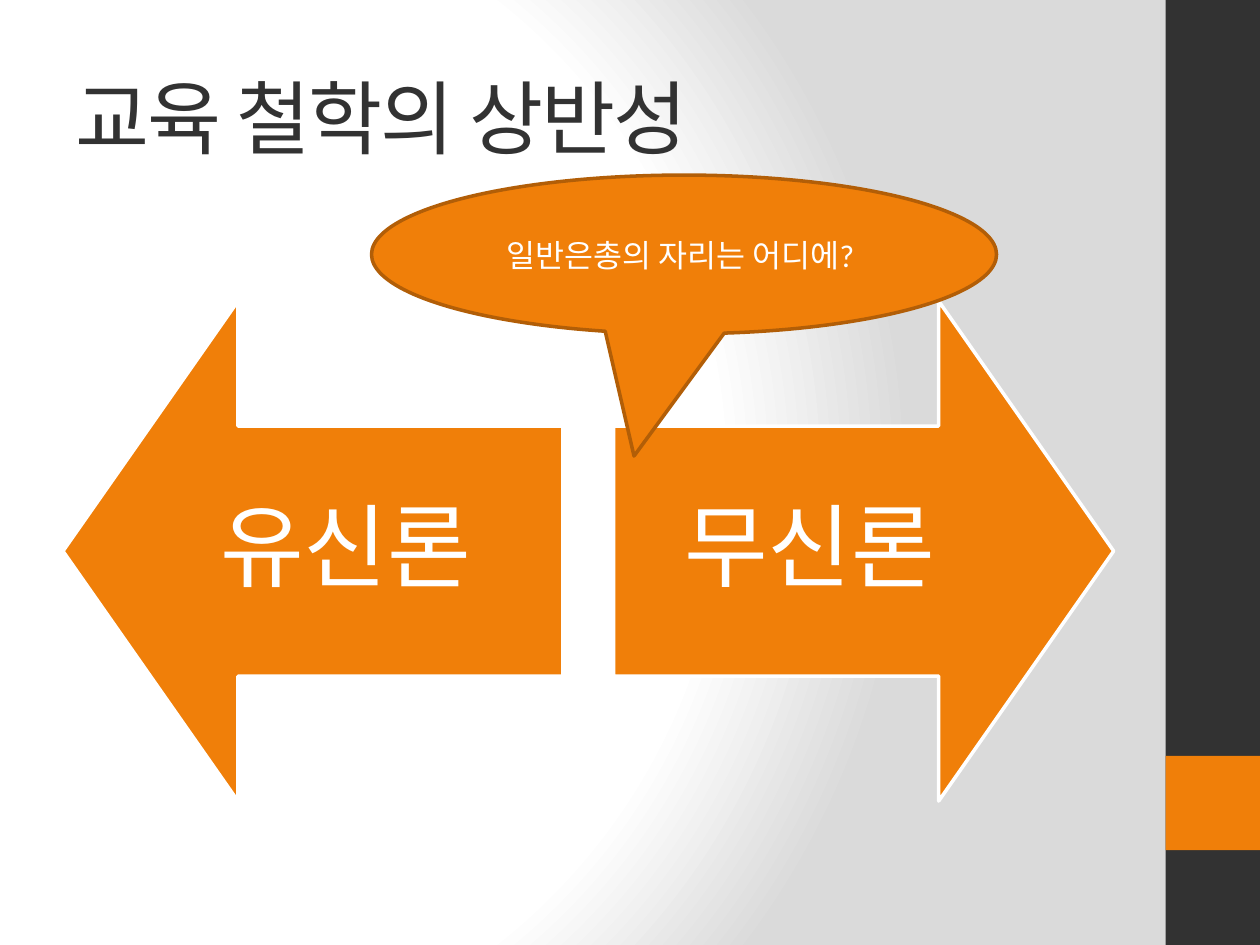
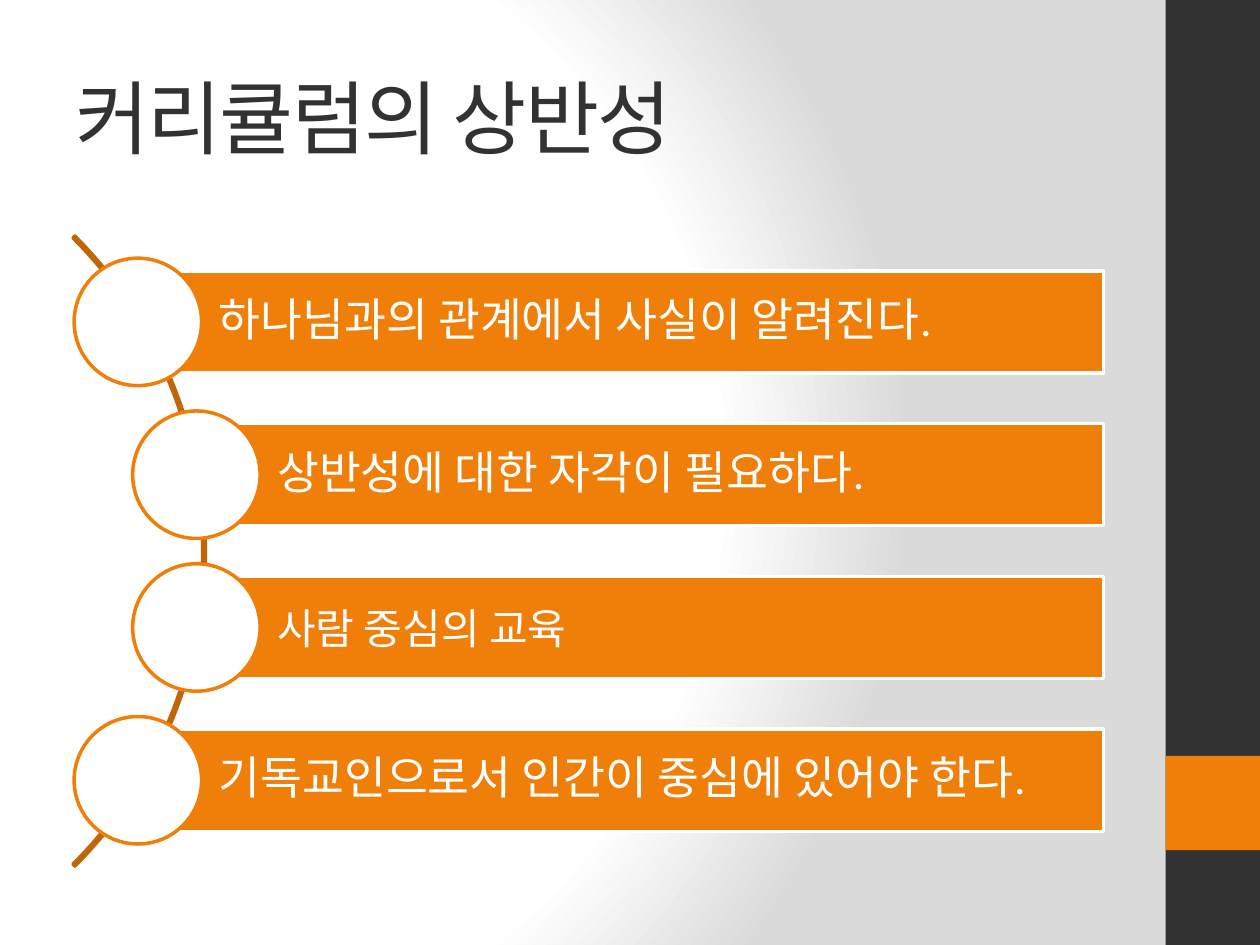
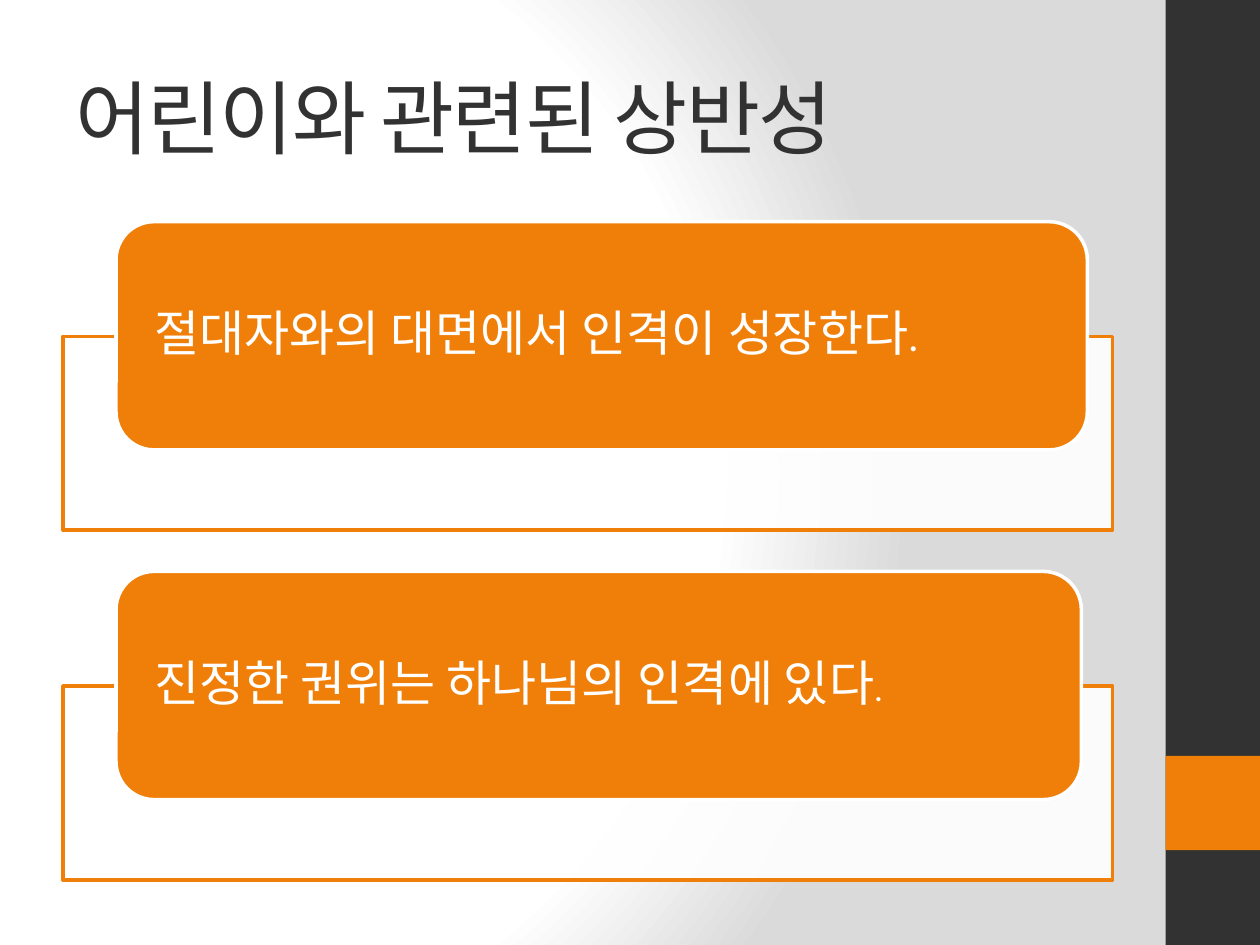
from dataclasses import dataclass
from typing import NamedTuple

import lxml.etree
import pptx
import pptx.dml.color
import pptx.enum.shapes
import pptx.enum.text
import pptx.oxml
import pptx.oxml.ns
import pptx.util

Cm = pptx.util.Cm
RGBColor = pptx.dml.color.RGBColor
SHAPE = pptx.enum.shapes.MSO_SHAPE
ALIGN = pptx.enum.text.PP_ALIGN

WHITE = RGBColor(0xFF, 0xFF, 0xFF)
CHARCOAL = RGBColor(0x32, 0x32, 0x32)
ORANGE = RGBColor(0xF0, 0x7F, 0x09)
ARC_BROWN = RGBColor(0xC0, 0x66, 0x07)
CALLOUT_BROWN = RGBColor(0xB2, 0x5E, 0x07)
GREY = RGBColor(0xDA, 0xDA, 0xDA)

HEADING_FONT = "Cambria"
BODY_FONT = "Calibri"
BACKGROUND_STOPS = ((0, WHITE), (75, WHITE), (100, GREY))


class Box(NamedTuple):
    left: float
    top: float
    width: float
    height: float

    def lengths(self) -> list:
        return [Cm(value) for value in self]


class Words(NamedTuple):
    text: str
    size: int


@dataclass
class Style:
    fill: RGBColor | None = ORANGE
    line: RGBColor | None = WHITE
    opacity: int = 100
    rotation: int = 0
    adjustments: tuple = ()


@dataclass
class TextStyle:
    font: str = BODY_FONT
    color: RGBColor = WHITE
    align: ALIGN = ALIGN.LEFT
    insets: tuple = (0.25, 0.13, 0.25, 0.13)
    line_spacing: float = 0.9
    tracking: int = 0


@dataclass
class Belief:
    words: Words
    box: Box
    arrow_left: float
    rotation: int


@dataclass
class Principle:
    words: Words
    center: float
    line_spacing: float = 0.9


@dataclass
class Card:
    sentence: tuple
    width: float


TITLE_BOX = Box(1.27, 0.76, 21.16, 3.18)
TITLE_STYLE = TextStyle(HEADING_FONT, CHARCOAL, line_spacing=1.0, tracking=-100)
SIDE_BAND = Box(23.5, 0, 1.9, 19.05)
SIDE_ACCENT = Box(23.5, 15.24, 1.9, 1.9)

ARROW_TOP, ARROW_SIZE = 6.07, 10.08
BELIEF_STYLE = TextStyle(align=ALIGN.CENTER, insets=(1.02,) * 4)
BELIEFS = (
    Belief(Words("유신론 ", 52), Box(3.02, 8.59, 8.31, 5.03), 1.27, 270),
    Belief(Words("무신론 ", 52), Box(12.37, 8.59, 8.31, 5.03), 12.37, 90),
)

OUTER, INNER = 2.78, 3.96
ROW_TOP, ROW_PITCH, ROW_HEIGHT, ROW_RIGHT = 5.46, 3.08, 2.06, 22.25
DISC_SIZE = 2.57
ROW_INSETS = (1.63, 0.18, 0.18, 0.18)
PRINCIPLES = (
    Principle(Words("하나님과의 관계에서 사실이 알려진다.", 26), OUTER),
    Principle(Words("상반성에 대한 자각이 필요하다.", 26), INNER),
    Principle(Words("사람 중심의 교육", 24), INNER, 1.0),
    Principle(Words("기독교인으로서 인간이 중심에 있어야 한다.", 26), OUTER),
)

FRAME_TOP, CARD_TOP, CARD_PITCH = 6.78, 4.47, 7.05
CARD_STYLE = TextStyle(insets=(0.56, 0, 0.56, 0))
CARDS = (
    Card((Words("절대자와의 대면에서 인격이 성장한다", 28), Words(".", 24)), 19.58),
    Card((Words("진정한 권위는 하나님의 인격에 있다", 28), Words(".", 20)), 19.46),
)


def write(frame, sentence: tuple, style: TextStyle) -> None:
    frame.word_wrap = True
    frame.vertical_anchor = pptx.enum.text.MSO_ANCHOR.MIDDLE
    (frame.margin_left, frame.margin_top,
     frame.margin_right, frame.margin_bottom) = map(Cm, style.insets)
    paragraph = frame.paragraphs[0]
    paragraph.alignment = style.align
    paragraph.line_spacing = style.line_spacing
    for words in sentence:
        run = paragraph.add_run()
        run.text = words.text
        run.font.name = style.font
        run.font.size = pptx.util.Pt(words.size)
        run.font.color.rgb = style.color
        if style.tracking:
            run.font._element.set("spc", str(style.tracking))


def add_text(slide, box: Box, sentence: tuple, style: TextStyle) -> None:
    write(slide.shapes.add_textbox(*box.lengths()).text_frame, sentence, style)


def add_figure(slide, kind: SHAPE, box: Box, style: Style):
    figure = slide.shapes.add_shape(kind, *box.lengths())
    figure.shadow.inherit = False
    figure.rotation = style.rotation
    for index, value in enumerate(style.adjustments):
        figure.adjustments[index] = value
    if style.fill is None:
        figure.fill.background()
    else:
        figure.fill.solid()
        figure.fill.fore_color.rgb = style.fill
    if style.opacity < 100:
        color = figure._element.spPr.find(".//" + pptx.oxml.ns.qn("a:srgbClr"))
        alpha = lxml.etree.SubElement(color, pptx.oxml.ns.qn("a:alpha"))
        alpha.set("val", str(style.opacity * 1000))
    if style.line is None:
        figure.line.fill.background()
    else:
        figure.line.color.rgb = style.line
        figure.line.width = pptx.util.Pt(2)
    return figure


def paint_background(master) -> None:
    master.background.fill.gradient()
    plain = master.element.find(".//" + pptx.oxml.ns.qn("a:gradFill"))
    stops = "".join(
        f'<a:gs pos="{position * 1000}"><a:srgbClr val="{color}"/></a:gs>'
        for position, color in BACKGROUND_STOPS
    )
    radial = pptx.oxml.parse_xml(
        f'<a:gradFill {pptx.oxml.ns.nsdecls("a")} rotWithShape="1">'
        f'<a:gsLst>{stops}</a:gsLst><a:path path="circle">'
        '<a:fillToRect l="20000" t="50000" r="100000" b="50000"/>'
        "</a:path></a:gradFill>"
    )
    plain.getparent().replace(plain, radial)


def add_titled_slide(deck, title: str):
    slide = deck.slides.add_slide(deck.slide_layouts[6])
    add_figure(slide, SHAPE.RECTANGLE, SIDE_BAND, Style(CHARCOAL, None))
    add_figure(slide, SHAPE.RECTANGLE, SIDE_ACCENT, Style(ORANGE, None))
    add_text(slide, TITLE_BOX, (Words(title, 46),), TITLE_STYLE)
    return slide


def build_philosophy(deck) -> None:
    slide = add_titled_slide(deck, "교육 철학의 상반성")
    for belief in BELIEFS:
        arrow_box = Box(belief.arrow_left, ARROW_TOP, ARROW_SIZE, ARROW_SIZE)
        add_figure(slide, SHAPE.UP_ARROW, arrow_box,
                   Style(rotation=belief.rotation, adjustments=(0.5, 0.35)))
        add_text(slide, belief.box, (belief.words,), BELIEF_STYLE)
    question = add_figure(slide, SHAPE.OVAL_CALLOUT, Box(7.49, 3.53, 12.6, 3.2),
                          Style(line=CALLOUT_BROWN, adjustments=(-0.08, 1.27)))
    write(question.text_frame, (Words("일반은총의 자리는 어디에? ", 18),),
          TextStyle(align=ALIGN.CENTER, line_spacing=1.0))


def build_curriculum(deck) -> None:
    slide = add_titled_slide(deck, "커리큘럼의 상반성")
    add_figure(slide, SHAPE.BLOCK_ARC, Box(-13.82, 2.13, 17.96, 17.96),
               Style(None, ARC_BROWN, adjustments=(189, 27, 0.003)))
    for index, principle in enumerate(PRINCIPLES):
        top = ROW_TOP + index * ROW_PITCH
        bar_box = Box(principle.center, top, ROW_RIGHT - principle.center, ROW_HEIGHT)
        bar = add_figure(slide, SHAPE.RECTANGLE, bar_box, Style())
        write(bar.text_frame, (principle.words,),
              TextStyle(insets=ROW_INSETS, line_spacing=principle.line_spacing))
        disc_box = Box(principle.center - DISC_SIZE / 2,
                       top + (ROW_HEIGHT - DISC_SIZE) / 2, DISC_SIZE, DISC_SIZE)
        add_figure(slide, SHAPE.OVAL, disc_box, Style(WHITE, ORANGE))


def build_children(deck) -> None:
    slide = add_titled_slide(deck, "어린이와 관련된 상반성")
    for index, card in enumerate(CARDS):
        drop = index * CARD_PITCH
        add_figure(slide, SHAPE.RECTANGLE, Box(1.27, FRAME_TOP + drop, 21.16, 3.91),
                   Style(WHITE, ORANGE, opacity=90))
        panel = add_figure(slide, SHAPE.ROUNDED_RECTANGLE,
                           Box(2.34, CARD_TOP + drop, card.width, 4.6), Style())
        write(panel.text_frame, card.sentence, CARD_STYLE)


def main() -> None:
    deck = pptx.Presentation()
    deck.slide_width, deck.slide_height = Cm(25.4), Cm(19.05)
    paint_background(deck.slide_master)
    build_philosophy(deck)
    build_curriculum(deck)
    build_children(deck)
    deck.save("out.pptx")


if __name__ == "__main__":
    main()
